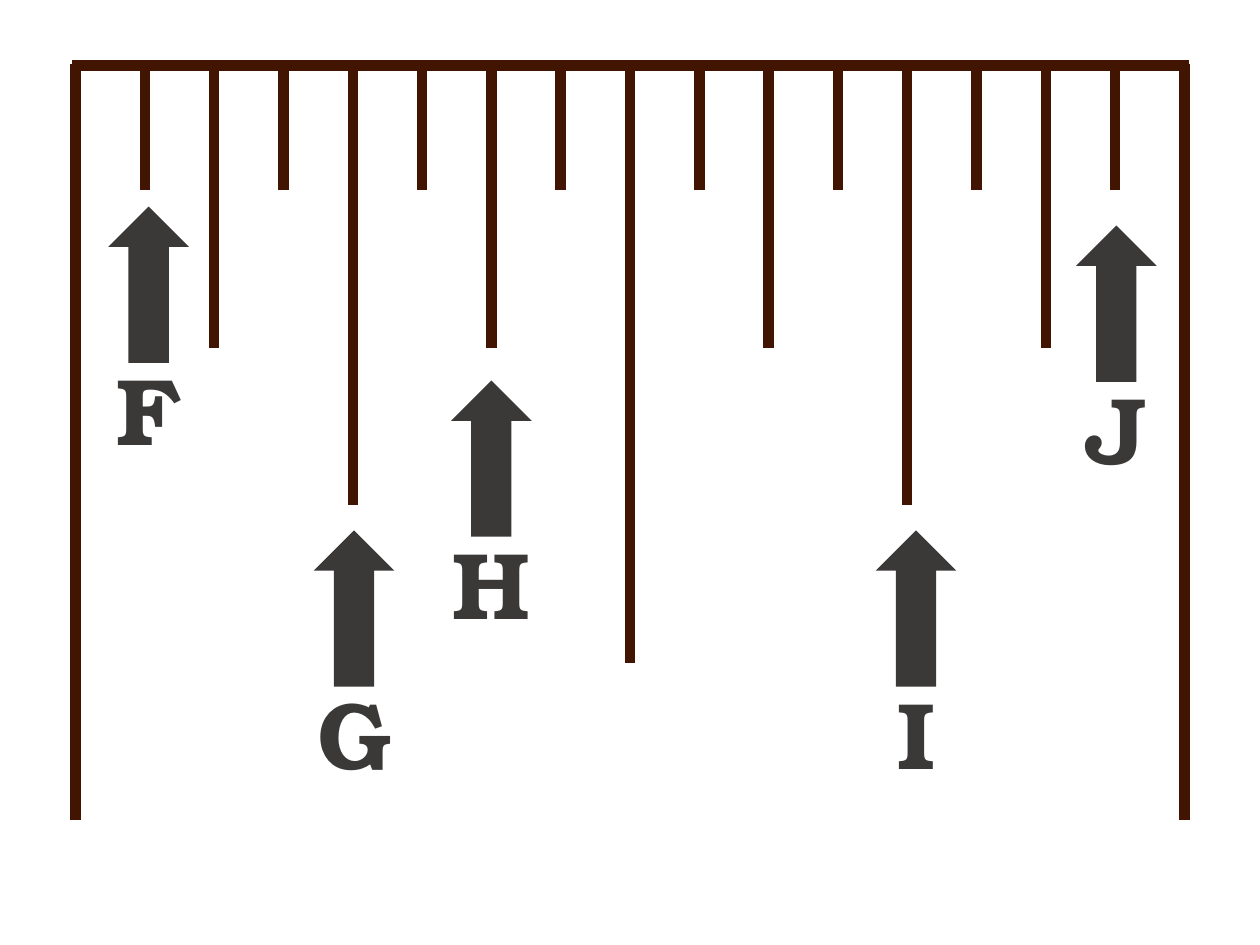
"""Build a slide of one ruler inch in sixteenths with five lettered markers."""
import pptx
import pptx.util
import pptx.dml.color
import pptx.enum.shapes
import pptx.enum.text
import pptx.oxml.ns
import lxml.etree

Inches = pptx.util.Inches
COLORS = {"ruler": "411501", "marker": "3B3838"}
FONT = "TeX Gyre Bonum"
MARKERS = [("F", 1.18, 1.64), ("G", 2.81, 4.21), ("I", 7.27, 4.21),
           ("H", 3.9, 3.02), ("J", 8.86, 1.79)]
LEFT, TOP, STEP, DIVISIONS = 0.6, 0.51, 0.55, 16
TICK_LENGTHS = {16: 6, 8: 4.75, 4: 3.5, 2: 2.25, 1: 1}
ARROW_W, ARROW_H = 0.64, 1.24
LABEL_W, LABEL_H, LABEL_DROP = 0.84, 1.01, 1.1


def rgb(name):
    return pptx.dml.color.RGBColor.from_string(COLORS[name])


def add_line(shapes, x1, y1, x2, y2):
    line = shapes.add_connector(pptx.enum.shapes.MSO_CONNECTOR.STRAIGHT,
                                *map(Inches, (x1, y1, x2, y2)))
    line.line.color.rgb = rgb("ruler")
    line.line.width = pptx.util.Pt(6)
    lxml.etree.SubElement(line._element.spPr, pptx.oxml.ns.qn("a:effectLst"))


def add_text(shapes, text, x, y, w, h, *, size, color, bold=False):
    tf = shapes.add_textbox(*map(Inches, (x, y, w, h))).text_frame
    tf.word_wrap = True
    tf.auto_size = pptx.enum.text.MSO_AUTO_SIZE.SHAPE_TO_FIT_TEXT
    p = tf.paragraphs[0]
    p.alignment = pptx.enum.text.PP_ALIGN.CENTER
    r = p.add_run()
    r.text = text
    r.font.name, r.font.size, r.font.bold = FONT, pptx.util.Pt(size), bold
    r.font.color.rgb = rgb(color)


def add_ruler(s):
    shapes = s.shapes.add_group_shape().shapes
    for i in range(DIVISIONS + 1):
        x = LEFT + i * STEP
        length = next(n for d, n in TICK_LENGTHS.items() if i % d == 0)
        add_line(shapes, x, TOP, x, TOP + length)
    add_line(shapes, 0.57, 0.52, 9.44, 0.52)


def add_marker(s, letter, center, top):
    shapes = s.shapes.add_group_shape().shapes
    sp = shapes.add_shape(pptx.enum.shapes.MSO_SHAPE.UP_ARROW,
                          *map(Inches, (center - ARROW_W / 2, top, ARROW_W, ARROW_H)))
    sp.shadow.inherit = False
    sp.fill.solid()
    sp.fill.fore_color.rgb = rgb("marker")
    sp.line.fill.background()
    add_text(shapes, letter, center - LABEL_W / 2, top + LABEL_DROP, LABEL_W, LABEL_H,
             size=54, color="marker", bold=True)


def main():
    prs = pptx.Presentation()
    prs.slide_width, prs.slide_height = Inches(10), Inches(7.5)
    s = prs.slides.add_slide(prs.slide_layouts[6])
    add_ruler(s)
    for marker in MARKERS:
        add_marker(s, *marker)
    prs.save("out.pptx")


if __name__ == "__main__":
    main()
